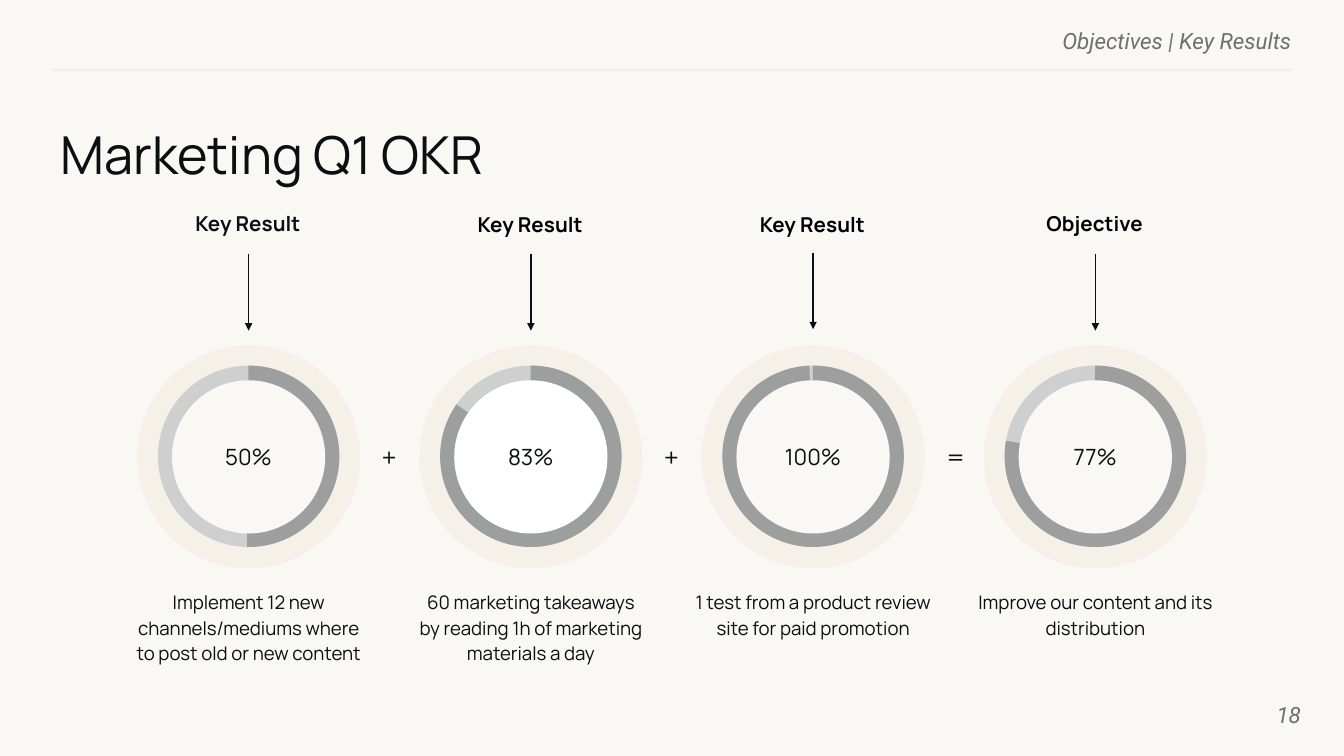
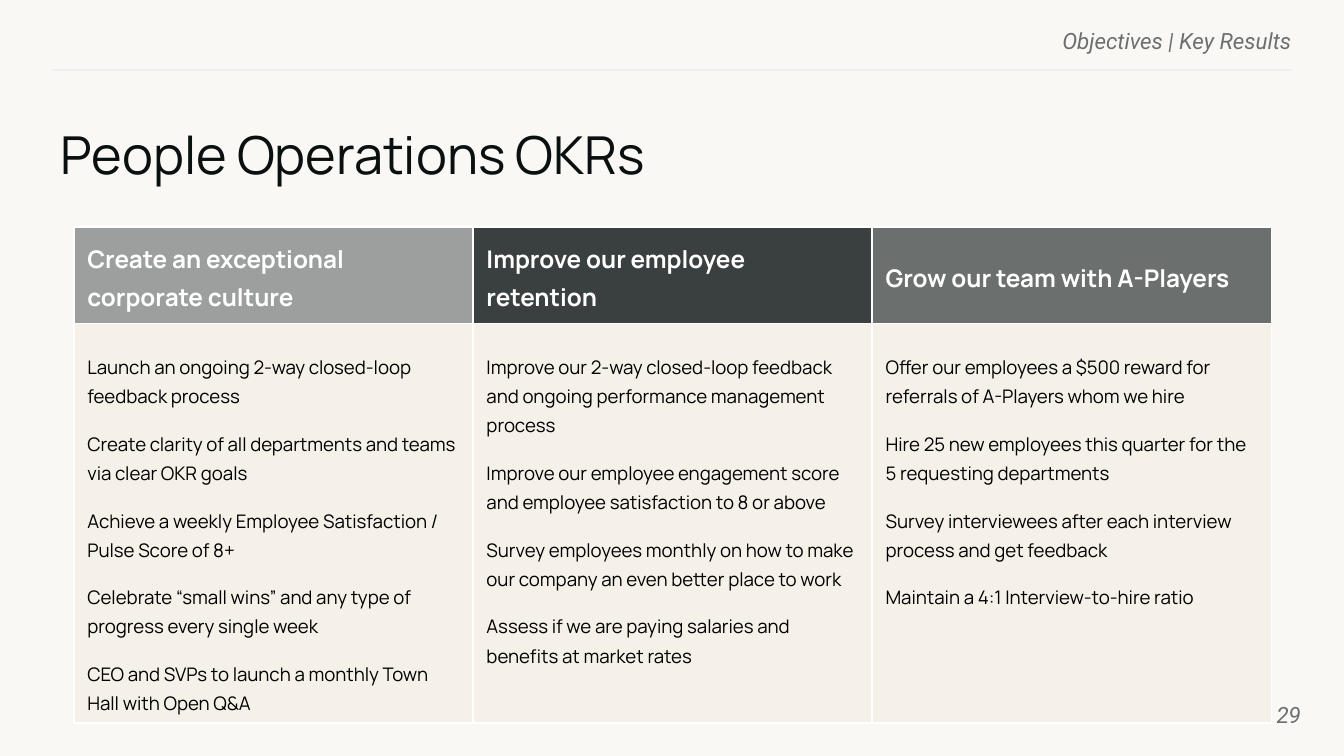
import dataclasses
import typing

import lxml.etree
import pptx
import pptx.dml.color
import pptx.enum.dml
import pptx.enum.shapes
import pptx.enum.text
import pptx.oxml
import pptx.oxml.ns
import pptx.util

Inches = pptx.util.Inches
Pt = pptx.util.Pt
SHAPE = pptx.enum.shapes.MSO_SHAPE
ALIGN = pptx.enum.text.PP_ALIGN
ANCHOR = pptx.enum.text.MSO_ANCHOR

PAPER = "F9F8F5"
SAND = "F5F1E8"
INK = "09100F"
BLACK = "000000"
WHITE = "FFFFFF"
RULE = "EFEFEF"
MUTED = "6C706F"
TRACK = "CECFCF"
PROGRESS = "9D9F9F"

HEADING_FONT = "Manrope"
FOOTER_FONT = "Roboto"

RING_TURN = 90.4
RING_START = 179.44
FIRST_CENTRE = 1.85
CENTRE_STEP = 2.1


class Box(typing.NamedTuple):
    left: float
    top: float
    width: float
    height: float

    def lengths(self) -> list:
        return [Inches(value) for value in self]


@dataclasses.dataclass(frozen=True)
class TextStyle:
    size: float
    colour: str = INK
    font: str = HEADING_FONT
    bold: bool = False
    italic: bool = False
    align: typing.Any = ALIGN.LEFT
    line_spacing: float = 1.0


@dataclasses.dataclass(frozen=True)
class Result:
    label: str
    percent: str
    ring_end: float
    caption: str
    operator: str = ""
    label_top: float = 1.55
    label_colour: str = BLACK
    arrow_top: float = 1.89
    caption_width: float = 1.84
    core: str = PAPER


@dataclasses.dataclass(frozen=True)
class Objective:
    heading: str
    fill: str
    key_results: tuple


TITLE = TextStyle(28)
RUNNING = TextStyle(12, MUTED, FOOTER_FONT, italic=True, align=ALIGN.RIGHT)
LABEL = TextStyle(11, BLACK, bold=True, align=ALIGN.CENTER)
CAPTION = TextStyle(10, align=ALIGN.CENTER, line_spacing=1.15)
PERCENT = TextStyle(12, align=ALIGN.CENTER)
OPERATOR = TextStyle(14, align=ALIGN.CENTER)
TABLE_HEAD = TextStyle(13, WHITE, bold=True, line_spacing=1.15)
TABLE_BODY = TextStyle(10, BLACK, line_spacing=1.15)

RESULTS = (
    Result("Key Result", "50%", 0.62,
           "Implement 12 new channels/mediums where to post old or new content",
           "+", label_colour=INK),
    Result("Key Result", "83%", 124.46,
           "60 marketing takeaways by reading 1h of marketing materials a day",
           "+", label_top=1.56, caption_width=1.74, core=WHITE),
    Result("Key Result", "100%", 177.24,
           "1 test from a product review site for paid promotion",
           "=", label_top=1.56, arrow_top=1.88),
    Result("Objective", "77%", 99.44, "Improve our content and its distribution"),
)

OBJECTIVES = (
    Objective("Create an exceptional corporate culture", PROGRESS, (
        "Launch an ongoing 2-way closed-loop feedback process",
        "Create clarity of all departments and teams via clear OKR goals",
        "Achieve a weekly Employee Satisfaction / Pulse Score of 8+",
        "Celebrate “small wins” and any type of progress every single week",
        "CEO and SVPs to launch a monthly Town Hall with Open Q&A",
    )),
    Objective("Improve our employee retention", "3A403F", (
        "Improve our 2-way closed-loop feedback and ongoing performance management process",
        "Improve our employee engagement score and employee satisfaction to 8 or above",
        "Survey employees monthly on how to make our company an even better place to work",
        "Assess if we are paying salaries and benefits at market rates",
    )),
    Objective("Grow our team with A-Players", "6B706F", (
        "Offer our employees a $500 reward for referrals of A-Players whom we hire",
        "Hire 25 new employees this quarter for the 5 requesting departments",
        "Survey interviewees after each interview process and get feedback",
        "Maintain a 4:1 Interview-to-hire ratio",
    )),
)


def apply(target, values: dict) -> None:
    for name, value in values.items():
        setattr(target, name, value)


def rgb(code: str) -> pptx.dml.color.RGBColor:
    return pptx.dml.color.RGBColor.from_string(code)


def fill_solid(fill, code: str) -> None:
    fill.solid()
    fill.fore_color.rgb = rgb(code)


def margins(side: float, top: float, bottom: float) -> dict:
    return {"margin_left": Inches(side), "margin_right": Inches(side),
            "margin_top": Inches(top), "margin_bottom": Inches(bottom)}


NO_INSET = margins(0, 0, 0)
SLIM_INSET = margins(0.04, 0.02, 0.02)


def write(frame, lines: typing.Sequence[str], style: TextStyle, gap: float = 0) -> None:
    """Fill a text frame with one paragraph a line, gap points apart."""
    for index, line in enumerate(lines):
        paragraph = frame.add_paragraph() if index else frame.paragraphs[0]
        apply(paragraph, {"alignment": style.align, "line_spacing": style.line_spacing,
                          "space_before": Pt(gap if index else 0), "space_after": Pt(0)})
        run = paragraph.add_run()
        run.text = line
        apply(run.font, {"name": style.font, "size": Pt(style.size),
                         "bold": style.bold, "italic": style.italic})
        run.font.color.rgb = rgb(style.colour)


def add_text(slide, box: Box, text: str, style: TextStyle, inset: dict,
             anchor=ANCHOR.TOP, grow: bool = False) -> None:
    frame = slide.shapes.add_textbox(*box.lengths()).text_frame
    fit = pptx.enum.text.MSO_AUTO_SIZE
    apply(frame, {"word_wrap": True, "vertical_anchor": anchor,
                  "auto_size": fit.SHAPE_TO_FIT_TEXT if grow else fit.NONE, **inset})
    write(frame, [text], style)


def add_disc(shapes, centre: float, top: float, diameter: float, code: str,
             preset=SHAPE.OVAL):
    box = Box(centre - diameter / 2, top, diameter, diameter)
    disc = shapes.add_shape(preset, *box.lengths())
    disc.shadow.inherit = False
    fill_solid(disc.fill, code)
    disc.line.fill.background()
    return disc


def add_line(slide, start: tuple, end: tuple, code: str, arrow: bool = False) -> None:
    line = slide.shapes.add_connector(
        pptx.enum.shapes.MSO_CONNECTOR.STRAIGHT,
        *[Inches(value) for value in (*start, *end)])
    line.line.width = Pt(0.75)
    fill_solid(line.line.fill, code)
    if arrow:
        lxml.etree.SubElement(line.line._get_or_add_ln(), pptx.oxml.ns.qn("a:tailEnd"),
                              type="triangle", w="sm", len="sm")
    lxml.etree.SubElement(line._element.spPr, pptx.oxml.ns.qn("a:effectLst"))


def add_page(deck, title: str, number: int):
    """Add a slide with the rule, running head, title and number all slides share."""
    slide = deck.slides.add_slide(deck.slide_layouts[6])
    add_line(slide, (9.61, 0.52), (0.39, 0.52), RULE)
    add_text(slide, Box(9.08, 5.1, 0.6, 0.43), str(number), RUNNING, NO_INSET, ANCHOR.MIDDLE)
    add_text(slide, Box(4.92, 0.2, 4.69, 0.18), "Objectives | Key Results", RUNNING, NO_INSET)
    add_text(slide, Box(0.45, 0.91, 9.23, 0.51), title, TITLE, NO_INSET)
    return slide


def add_ring(slide, centre: float, result: Result) -> None:
    shapes = slide.shapes.add_group_shape().shapes
    add_disc(shapes, centre, 2.72, 1.35, TRACK)
    progress = add_disc(shapes, centre, 2.72, 1.35, PROGRESS, SHAPE.PIE)
    progress.rotation = RING_TURN
    # Angles are stored in 60000ths of a degree, adjustments in 100000ths.
    for index, degrees in enumerate((RING_START, result.ring_end)):
        progress.adjustments[index] = degrees * 0.6
    core = add_disc(shapes, centre, 2.83, 1.14, result.core)
    apply(core.text_frame, {"word_wrap": True, "vertical_anchor": ANCHOR.MIDDLE, **SLIM_INSET})
    write(core.text_frame, [result.percent], PERCENT)


def add_result(slide, centre: float, result: Result) -> None:
    add_disc(slide.shapes, centre, 2.57, 1.66, SAND)
    add_line(slide, (centre, result.arrow_top), (centre, result.arrow_top + 0.57),
             INK, arrow=True)
    add_text(slide, Box(centre - 1.07, result.label_top, 2.13, 0.22), result.label,
             dataclasses.replace(LABEL, colour=result.label_colour), SLIM_INSET, grow=True)
    add_text(slide, Box(centre - result.caption_width / 2, 4.35, result.caption_width, 0.8),
             result.caption, CAPTION, SLIM_INSET)
    if result.operator:
        add_text(slide, Box(centre + 0.89, 3.21, 0.31, 0.38), result.operator, OPERATOR,
                 margins(0.1, 0.1, 0.1), ANCHOR.MIDDLE)
    add_ring(slide, centre, result)


def set_borders(cell, widths: dict) -> None:
    properties = cell._tc.get_or_add_tcPr()
    for index, (side, width) in enumerate(widths.items()):
        properties.insert(index, pptx.oxml.parse_xml(
            f'<a:ln{side} {pptx.oxml.ns.nsdecls("a")} w="{Pt(width)}"><a:solidFill>'
            f'<a:srgbClr val="{WHITE}"/></a:solidFill></a:ln{side}>'))


def fill_cell(cell, lines: typing.Sequence[str], style: TextStyle, code: str,
              values: dict, top_border: float, bottom_border: float) -> None:
    apply(cell, values)
    write(cell.text_frame, lines, style, gap=10)
    fill_solid(cell.fill, code)
    set_borders(cell, {"L": 1, "R": 1, "T": top_border, "B": bottom_border})


def add_objectives(slide) -> None:
    row_heights = (0.72, 2.41)
    column_width = 2.97
    box = Box(0.55, 1.69, column_width * len(OBJECTIVES), sum(row_heights))
    table = slide.shapes.add_table(len(row_heights), len(OBJECTIVES), *box.lengths()).table
    apply(table, {"first_row": False, "horz_banding": False})
    for row, height in zip(table.rows, row_heights):
        row.height = Inches(height)
    head = {"vertical_anchor": ANCHOR.MIDDLE, **margins(0.1, 0.05, 0.05)}
    body = {"vertical_anchor": ANCHOR.TOP, **margins(0.1, 0.2, 0.05)}
    for index, objective in enumerate(OBJECTIVES):
        table.columns[index].width = Inches(column_width)
        fill_cell(table.cell(0, index), [objective.heading], TABLE_HEAD,
                  objective.fill, head, 1, 0.75)
        fill_cell(table.cell(1, index), objective.key_results, TABLE_BODY,
                  SAND, body, 0.75, 1)
        table.cell(1, index).text_frame.paragraphs[-1].space_after = Pt(10)


def main() -> None:
    deck = pptx.Presentation()
    apply(deck, {"slide_width": Inches(10), "slide_height": Inches(10) * 9 // 16})
    fill_solid(deck.slide_master.background.fill, PAPER)

    marketing = add_page(deck, "Marketing Q1 OKR", 18)
    for index, result in enumerate(RESULTS):
        add_result(marketing, FIRST_CENTRE + index * CENTRE_STEP, result)

    add_objectives(add_page(deck, "People Operations OKRs", 29))
    deck.save("out.pptx")


if __name__ == "__main__":
    main()
